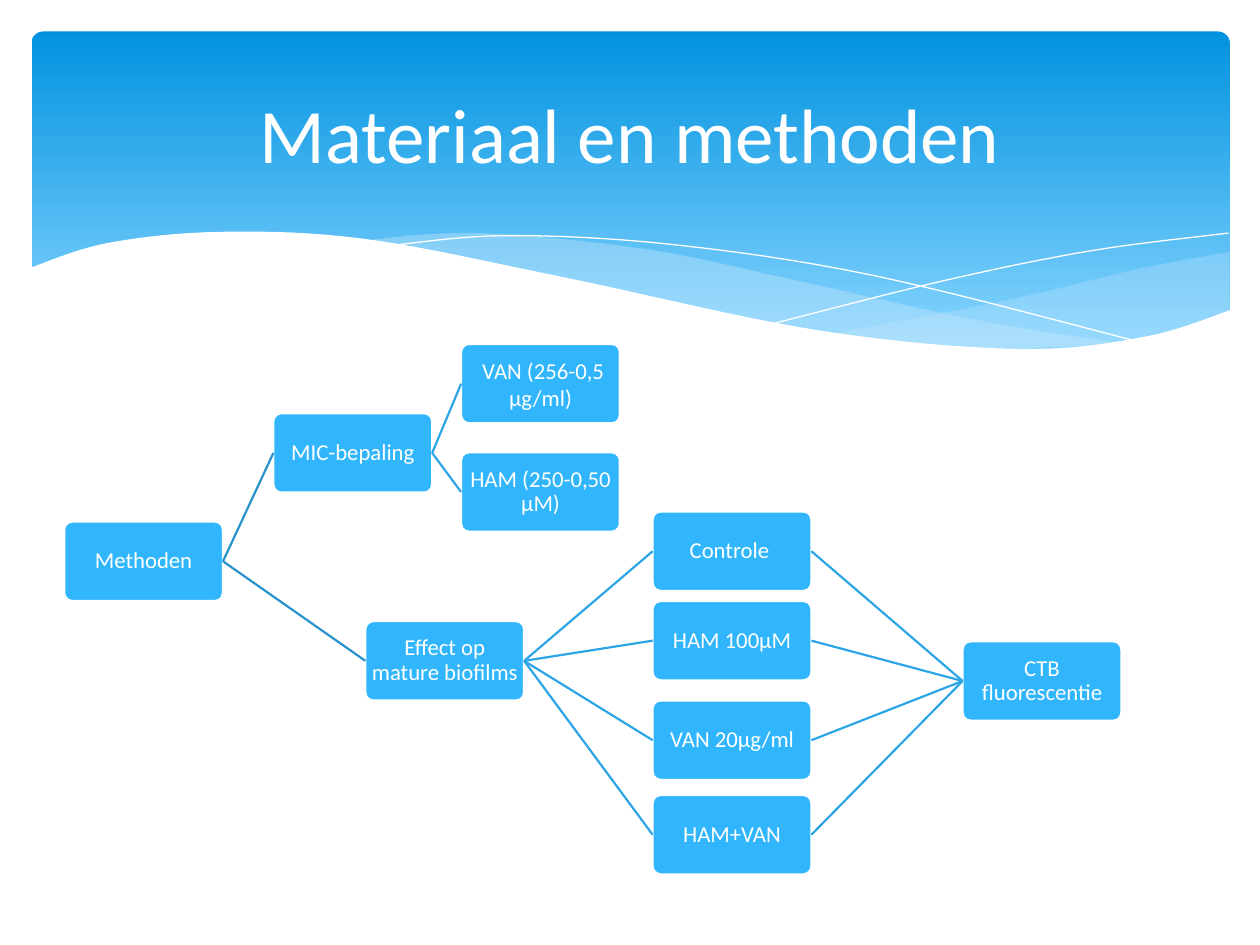
from dataclasses import dataclass

from lxml.etree import SubElement
from pptx import Presentation
from pptx.dml.color import RGBColor
from pptx.enum.shapes import MSO_CONNECTOR as Connector, MSO_SHAPE as Shape
from pptx.enum.text import MSO_ANCHOR as Anchor, PP_ALIGN as Align
from pptx.oxml.ns import qn
from pptx.util import Inches, Pt

COLORS = {
    "white": "FFFFFF", "box": "31B6FD", "wave": "C6E7FC",
    "banner_top": "0293E0", "banner_bottom": "83D3FE",
    "main_branch": "2792CB", "sub_branch": "2CA5E6",
}
FONT = "Calibri"
BOX_WIDTH, BOX_HEIGHT = 1.26, 0.63
LEFT_SIDE, RIGHT_SIDE = 1, 3
CURVE_STEPS = 8
Points = list[tuple[float, float]]


@dataclass
class Wave:
    edges: list[Points]  # each edge is a smooth curve through its points
    fill: str | None = None
    opacity: int = 100


@dataclass
class Step:
    text: str
    left: float
    top: float
    line_spacing: float = 0.9


@dataclass
class Branch:
    start: str
    ends: list[str]
    color: str = "sub_branch"


# Banner waves, from back to front
WAVES = [
    Wave([[(9.76, 2), (9.06, 2.13), (8.05, 2.37), (6.61, 2.65)],
          [(6.61, 2.65), (7.57, 2.76), (8.54, 2.76), (9.28, 2.63), (9.76, 2.47)]],
         "wave", 29),
    Wave([[(8.93, 2.73), (7.75, 2.54), (6.29, 2.22), (5.14, 1.98), (3.8, 1.85), (2.86, 1.91)],
          [(2.86, 1.91), (4.49, 2.22), (6.01, 2.55), (7.48, 2.76), (8.93, 2.73)]],
         "wave", 40),
    Wave([[(3.09, 1.95), (4.01, 1.87), (5.33, 1.94), (6.95, 2.19), (9.07, 2.72)]]),
    Wave([[(6.13, 2.57), (7.48, 2.23), (8.66, 1.99), (9.75, 1.85)]]),
    Wave([[(9.77, 2.46), (9.1, 2.67), (8.09, 2.77), (6.48, 2.62), (4.47, 2.2),
           (2.92, 1.9), (1.77, 1.84), (0.85, 1.93), (0.23, 2.13)],
          [(0.23, 3.29), (9.77, 3.29)]], "white"),
]

STEPS = {
    "methods": Step("Methoden", 0.51, 4.14),
    "mic": Step("MIC-bepaling", 2.17, 3.28),
    "mic_van": Step(" VAN (256-0,5 µg/ml)", 3.66, 2.73, 1.0),
    "mic_ham": Step("HAM (250-0,50 µM)", 3.66, 3.59),
    "biofilm": Step("Effect op mature biofilms", 2.9, 4.93),
    "control": Step("Controle ", 5.18, 4.06),
    "ham": Step("HAM 100µM", 5.18, 4.77),
    "van": Step("VAN 20µg/ml", 5.18, 5.56),
    "ham_van": Step("HAM+VAN", 5.18, 6.31),
    "ctb": Step("CTB fluorescentie", 7.64, 5.09),
}
TREATMENTS = ["control", "ham", "van", "ham_van"]
BRANCHES = [
    Branch("methods", ["mic", "biofilm"], "main_branch"),
    Branch("mic", ["mic_van", "mic_ham"]),
    Branch("biofilm", TREATMENTS),
    *(Branch(treatment, ["ctb"]) for treatment in TREATMENTS),
]


def rgb(name: str) -> RGBColor:
    return RGBColor.from_string(COLORS[name])


def smooth(points: Points) -> Points:
    """Catmull-Rom curve through the points."""
    padded = [points[0], *points, points[-1]]
    curve = [points[0]]
    for before, start, end, after in zip(padded, padded[1:], padded[2:], padded[3:]):
        for step in range(1, CURVE_STEPS + 1):
            t = step / CURVE_STEPS
            curve.append(tuple(
                b + ((c - a) * t + (2 * a - 5 * b + 4 * c - d) * t**2
                     + (3 * b - a - 3 * c + d) * t**3) / 2
                for a, b, c, d in zip(before, start, end, after)))
    return curve


def style_text(paragraph, size: float) -> None:
    paragraph.alignment = Align.CENTER
    for run in paragraph.runs:
        run.font.name = FONT
        run.font.size = Pt(size)
        run.font.color.rgb = rgb("white")


def draw_banner(slide) -> None:
    banner = slide.shapes.add_shape(
        Shape.ROUNDED_RECTANGLE, Inches(0.25), Inches(0.25), Inches(9.51), Inches(2.7))
    banner.adjustments[0] = 0.034
    banner.shadow.inherit = False
    banner.line.fill.background()
    banner.fill.gradient()
    banner.fill.gradient_angle = 270
    stops = [(0, "banner_top"), (0.9, "banner_bottom")]
    for stop, (position, color) in zip(banner.fill.gradient_stops, stops):
        stop.position = position
        stop.color.rgb = rgb(color)


def draw_wave(slide, wave: Wave) -> None:
    start, *rest = [(Inches(x), Inches(y)) for edge in wave.edges for x, y in smooth(edge)]
    builder = slide.shapes.build_freeform(*start)
    builder.add_line_segments(rest, close=wave.fill is not None)
    outline = builder.convert_to_shape()
    outline.shadow.inherit = False
    if wave.fill is None:
        outline.fill.background()
        outline.line.color.rgb = rgb("white")
        outline.line.width = Pt(0)
        return
    outline.fill.solid()
    outline.fill.fore_color.rgb = rgb(wave.fill)
    outline.line.fill.background()
    if wave.opacity < 100:
        fill_color = outline.element.spPr.find(".//" + qn("a:srgbClr"))
        SubElement(fill_color, qn("a:alpha")).set("val", str(wave.opacity * 1000))


def draw_step(slide, step: Step):
    box = slide.shapes.add_shape(
        Shape.ROUNDED_RECTANGLE, Inches(step.left), Inches(step.top),
        Inches(BOX_WIDTH), Inches(BOX_HEIGHT))
    box.adjustments[0] = 0.1
    box.shadow.inherit = False
    box.fill.solid()
    box.fill.fore_color.rgb = rgb("box")
    box.line.color.rgb = rgb("white")
    box.line.width = Pt(1.25)
    frame = box.text_frame
    frame.word_wrap = True
    frame.vertical_anchor = Anchor.MIDDLE
    frame.margin_left = frame.margin_right = Inches(0.01)
    frame.margin_top = frame.margin_bottom = Inches(0.01)
    frame.text = step.text
    frame.paragraphs[0].line_spacing = step.line_spacing
    style_text(frame.paragraphs[0], 13)
    return box


def draw_link(slide, start, end, color: str) -> None:
    link = slide.shapes.add_connector(Connector.STRAIGHT, 0, 0, 0, 0)
    link.begin_connect(start, RIGHT_SIDE)
    link.end_connect(end, LEFT_SIDE)
    link.line.color.rgb = rgb(color)
    link.line.width = Pt(1.25)
    SubElement(link.element.spPr, qn("a:effectLst"))


def main() -> None:
    deck = Presentation()
    deck.slide_width, deck.slide_height = Inches(10), Inches(7.5)
    slide = deck.slides.add_slide(deck.slide_layouts[5])

    # Background banner
    draw_banner(slide)
    for wave in WAVES:
        draw_wave(slide, wave)

    # Title, brought in front of the banner
    title = slide.shapes.title
    slide.shapes.element.append(title.element)
    title.left, title.top = Inches(0.5), Inches(0.37)
    title.width, title.height = Inches(9), Inches(1.37)
    title.text_frame.text = "Materiaal en methoden"
    title.text_frame.vertical_anchor = Anchor.MIDDLE
    style_text(title.text_frame.paragraphs[0], 44)

    # Method tree
    boxes = {key: draw_step(slide, step) for key, step in STEPS.items()}
    for branch in BRANCHES:
        for end in branch.ends:
            draw_link(slide, boxes[branch.start], boxes[end], branch.color)

    deck.save("out.pptx")


if __name__ == "__main__":
    main()
